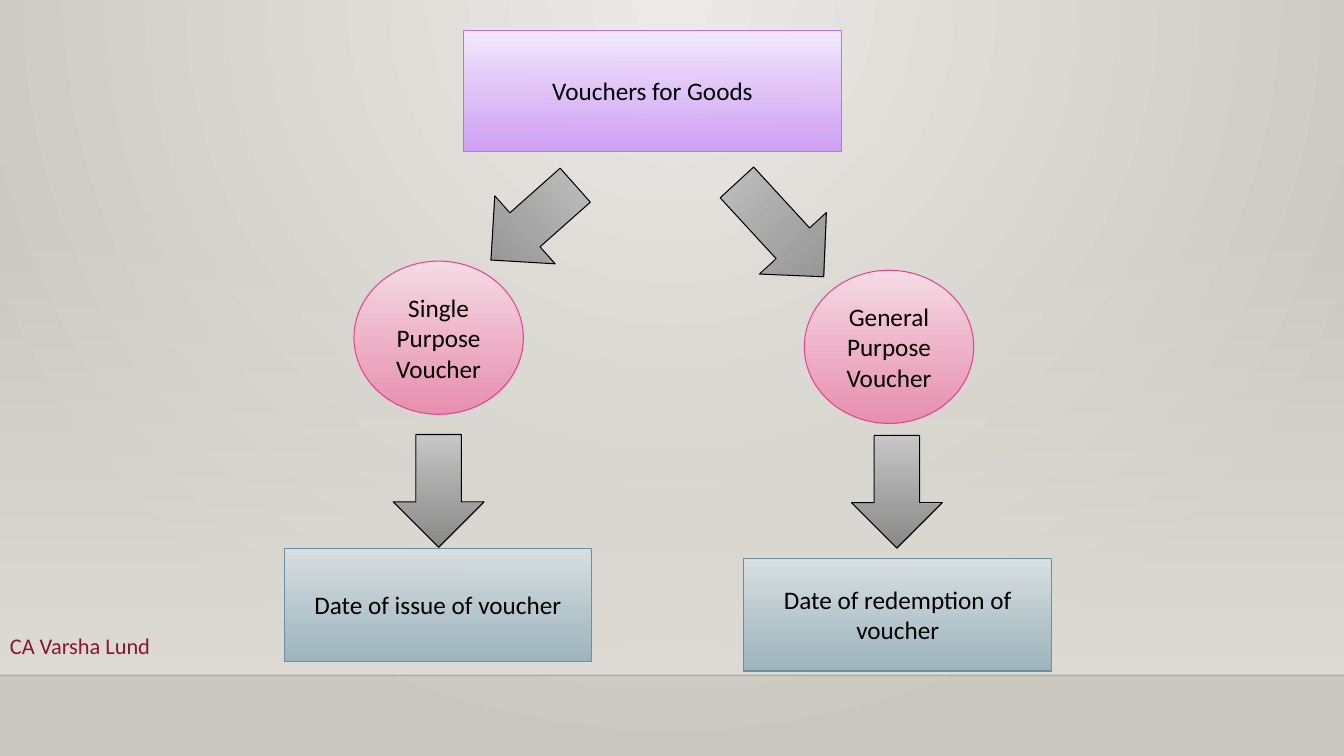
"""Builds a slide showing when vouchers for goods are taxed."""
from lxml.etree import SubElement
from pptx import Presentation
from pptx.dml.color import RGBColor
from pptx.enum.shapes import MSO_CONNECTOR as Connector, MSO_SHAPE as Shape
from pptx.enum.text import MSO_ANCHOR as Anchor, PP_ALIGN as Align
from pptx.oxml.ns import qn
from pptx.util import Cm, Pt

WIDTH, HEIGHT = 33.87, 19.05
FLOOR_TOP, FLOOR_EDGE = 5.61, 17.02
COLORS = {
    "ink": "000000", "author": "891731", "edge": "000001",
    "glow": "ECEAE7", "shade": "CAC7C1", "wall": "DFDBD5",
    "violet_light": "F4EAFD", "violet_dark": "CE9CF7", "violet_line": "BC72F0",
    "pink_light": "F7DCE5", "pink_dark": "EA8AAE", "pink_line": "DE478E",
    "grey_light": "C8C8C8", "grey_dark": "848484", "grey_line": "000000",
    "teal_light": "D9E1E4", "teal_dark": "9AB2BC", "teal_line": "6892A0",
}


class VoucherSlide:
    """Holds the style and the slide that is being drawn."""

    font = "Calibri"

    def __init__(self, slide):
        self.slide = slide

    def color(self, name):
        return RGBColor.from_string(COLORS[name])

    def set_alpha(self, color_element, percent):
        SubElement(color_element, qn("a:alpha"), val=str(percent * 1000))

    def gradient(self, fill, start, end):
        fill.gradient()
        fill.gradient_angle = 270
        for stop, name in zip(fill.gradient_stops, (start, end)):
            stop.color.rgb = self.color(name)

    def background(self, center, rim):
        self.gradient(self.slide.background.fill, center, rim)
        glow = self.slide.element.xpath(".//p:bgPr/a:gradFill")[0]
        glow.remove(glow.find(qn("a:lin")))
        circle = SubElement(glow, qn("a:path"), path="circle")
        SubElement(circle, qn("a:fillToRect"), l="43000", t="0", r="43000", b="100000")

    def panel(self, kind, left, top, width, height, start, end):
        shape = self.slide.shapes.add_shape(kind, Cm(left), Cm(top), Cm(width), Cm(height))
        shape.shadow.inherit = False
        self.gradient(shape.fill, start, end)
        return shape, shape.element.xpath("./p:spPr/a:gradFill//a:srgbClr")

    def floor(self):
        wall, stops = self.panel(Shape.RECTANGLE, 0, FLOOR_TOP, WIDTH,
                                 FLOOR_EDGE - FLOOR_TOP, "wall", "wall")
        wall.line.fill.background()
        self.set_alpha(stops[0], 0)
        edge = self.slide.shapes.add_connector(
            Connector.STRAIGHT, Cm(0), Cm(FLOOR_EDGE), Cm(WIDTH), Cm(FLOOR_EDGE))
        edge.line.color.rgb = self.color("edge")
        edge.line.width = Pt(1)
        self.set_alpha(edge.element.xpath(".//a:ln//a:srgbClr")[0], 20)
        SubElement(edge.element.spPr, qn("a:effectLst"))

    def node(self, kind, left, top, width, height, hue, text="", rotation=0):
        node, stops = self.panel(kind, left, top, width, height, f"{hue}_light", f"{hue}_dark")
        self.set_alpha(stops[1], 92)
        node.rotation = rotation
        node.line.color.rgb = self.color(f"{hue}_line")
        node.line.width = Pt(0.75)
        if text:
            node.text_frame.vertical_anchor = Anchor.MIDDLE
            self.set_text(node.text_frame, text, 18, "ink", Align.CENTER)

    def label(self, left, top, width, height, text):
        box = self.slide.shapes.add_textbox(Cm(left), Cm(top), Cm(width), Cm(height))
        self.set_text(box.text_frame, text, 16, "author", Align.LEFT)

    def set_text(self, frame, text, size, color, align):
        frame.word_wrap = True
        frame.text = text
        for paragraph in frame.paragraphs:
            paragraph.alignment = align
            paragraph.font.name = self.font
            paragraph.font.size = Pt(size)
            paragraph.font.color.rgb = self.color(color)


def main():
    deck = Presentation()
    deck.slide_width, deck.slide_height = Cm(WIDTH), Cm(HEIGHT)
    page = VoucherSlide(deck.slides.add_slide(deck.slide_layouts[6]))
    page.background("glow", "shade")
    page.floor()

    page.node(Shape.RECTANGLE, 11.68, 0.76, 9.53, 3.05, "violet", "Vouchers for Goods")
    for left, top, length, rotation in ((12.29, 4.19, 2.84, 48.4), (18.52, 4.17, 3.23, 317.4)):
        page.node(Shape.DOWN_ARROW, left, top, 2.29, length, "grey", rotation=rotation)
    for left, top, voucher in ((8.92, 6.58, "Single Purpose Voucher"),
                               (20.27, 6.81, "General\nPurpose Voucher")):
        page.node(Shape.OVAL, left, top, 4.27, 3.86, "pink", voucher)
    for left, top in ((9.91, 10.95), (21.46, 10.97)):
        page.node(Shape.DOWN_ARROW, left, top, 2.29, 2.84, "grey")
    for left, top, supply_date in ((7.16, 13.82, "Date of issue of voucher"),
                                   (18.75, 14.07, "Date of redemption of voucher")):
        page.node(Shape.RECTANGLE, left, top, 7.75, 2.84, "teal", supply_date)
    page.label(0, 15.8, 9.09, 0.94, "CA Varsha Lund")

    deck.save("out.pptx")


if __name__ == "__main__":
    main()
